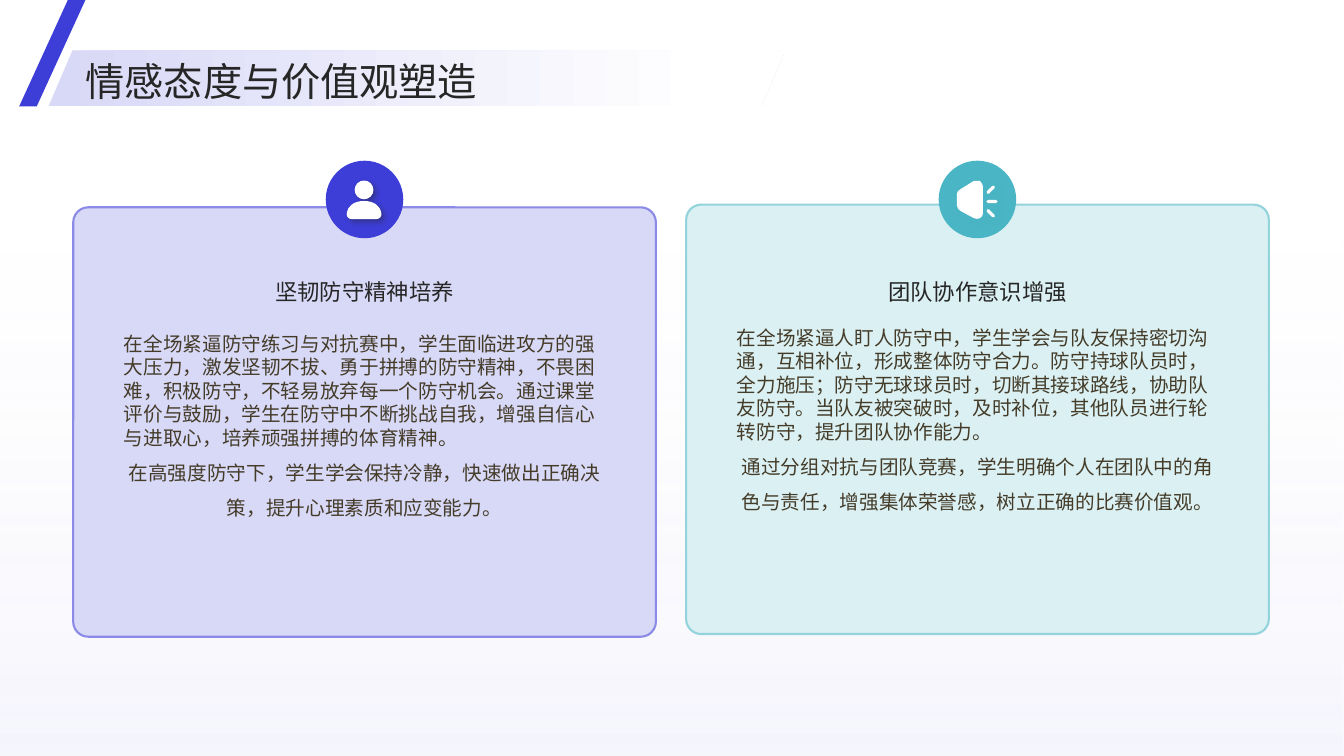
from dataclasses import dataclass
from math import atan2, cos, pi, sin

from lxml.etree import Element, SubElement
from pptx import Presentation
from pptx.dml.color import RGBColor
from pptx.enum.shapes import MSO_SHAPE
from pptx.enum.text import MSO_ANCHOR, MSO_AUTO_SIZE, PP_ALIGN
from pptx.oxml.ns import qn
from pptx.util import Pt


@dataclass(frozen=True)
class Theme:
    font: str = "Noto Sans CJK SC"
    ink: str = "262626"
    body_ink: str = "443C29"
    white: str = "FFFFFF"
    violet: str = "3D3ED7"
    violet_line: str = "8B8BE7"
    violet_pale: str = "D8D8F7"
    teal: str = "4AB5C4"
    teal_line: str = "92D3DC"
    teal_pale: str = "DBF0F3"
    title_size: float = 28
    heading_size: float = 16
    body_size: float = 14


THEME = Theme()
SLIDE_WIDTH, SLIDE_HEIGHT = 960, 540
BADGE_SIZE = 55.4
ICON_GRID = BADGE_SIZE / 77
FINENESS = 100

RESILIENCE = [
    "在全场紧逼防守练习与对抗赛中，学生面临进攻方的强大压力，激发坚韧不拔、勇于拼搏的防守精神，不畏困难，积极防守，不轻易放弃每一个防守机会。通过课堂评价与鼓励，学生在防守中不断挑战自我，增强自信心与进取心，培养顽强拼搏的体育精神。",
    "在高强度防守下，学生学会保持冷静，快速做出正确决策，提升心理素质和应变能力。",
]
TEAMWORK = [
    "在全场紧逼人盯人防守中，学生学会与队友保持密切沟通，互相补位，形成整体防守合力。防守持球队员时，全力施压；防守无球球员时，切断其接球路线，协助队友防守。当队友被突破时，及时补位，其他队员进行轮转防守，提升团队协作能力。",
    "通过分组对抗与团队竞赛，学生明确个人在团队中的角色与责任，增强集体荣誉感，树立正确的比赛价值观。",
]


def color(code):
    return RGBColor.from_string(code)


def place(shape, left, top, width, height):
    shape.left, shape.top = Pt(left), Pt(top)
    shape.width, shape.height = Pt(width), Pt(height)


def bring_to_front(shape):
    shape.element.getparent().append(shape.element)


def add_preset(page, kind, box, fill=None, line=None, adjust=None):
    shape = page.shapes.add_shape(kind, *(Pt(value) for value in box))
    shape.shadow.inherit = False
    if adjust is not None:
        shape.adjustments[0] = adjust
    if fill:
        shape.fill.solid()
        shape.fill.fore_color.rgb = color(fill)
    if line:
        shape.line.color.rgb = color(line)
        shape.line.width = Pt(1.5)
    else:
        shape.line.fill.background()
    return shape


def set_gradient(shape, stops, angle):
    shape.fill.gradient()
    shape.fill.gradient_angle = angle
    for stop, (position, code, opacity) in zip(shape.fill.gradient_stops, stops):
        stop.position = position
        stop.color.rgb = color(code)
    for tint, (position, code, opacity) in zip(shape.element.iter(qn("a:srgbClr")), stops):
        if opacity < 100:
            SubElement(tint, qn("a:alpha"), val=str(opacity * 1000))


def write(frame, text, size, ink, align=PP_ALIGN.LEFT, spacing=1.1, first=True):
    para = frame.paragraphs[0] if first else frame.add_paragraph()
    para.alignment = align
    para.line_spacing = spacing
    para.space_before = para.space_after = Pt(0)
    settings = para._p.get_or_add_pPr()
    settings.set("marL", "0")
    settings.set("indent", "0")
    SubElement(settings, qn("a:buNone"))
    span = para.add_run()
    span.text = text
    span.font.name = THEME.font
    span.font.size = Pt(size)
    span.font.bold = False
    span.font.color.rgb = color(ink)
    SubElement(span.font._element, qn("a:ea"), typeface=THEME.font)


def prepare_frame(frame, margins, anchor=MSO_ANCHOR.TOP):
    frame.word_wrap = True
    frame.auto_size = MSO_AUTO_SIZE.NONE
    frame.vertical_anchor = anchor
    frame.margin_left, frame.margin_top, frame.margin_right, frame.margin_bottom = map(Pt, margins)


def capsule(x1, y1, x2, y2, radius):
    heading = atan2(y2 - y1, x2 - x1)
    pull = 0.5523 * radius
    contour = []
    for x, y, turn in ((x2, y2, -pi / 2), (x1, y1, pi / 2)):
        for start in (heading + turn, heading + turn + pi / 2):
            end = start + pi / 2
            x_start, y_start = x + radius * cos(start), y + radius * sin(start)
            x_end, y_end = x + radius * cos(end), y + radius * sin(end)
            if not contour or start == heading + turn and (x1, y1) != (x2, y2):
                contour.append((x_start, y_start))
            contour.append((x_start - pull * sin(start), y_start + pull * cos(start),
                            x_end + pull * sin(end), y_end - pull * cos(end), x_end, y_end))
    return contour


PERSON = [
    [(38, 40), (49, 40, 54, 46, 55, 51), (56, 55, 54, 58, 50, 58), (26, 58),
     (22, 58, 20, 55, 21, 51), (22, 46, 27, 40, 38, 40)],
    capsule(38, 29, 38, 29, 9.3),
]
SPEAKER = [
    [(38, 20), (39, 20, 40, 20, 41, 20), (43, 22, 44, 24, 44, 26), (44, 52),
     (44, 54, 43, 56, 41, 57), (39, 58, 37, 58, 35, 57), (22, 50),
     (20, 49, 18, 47, 18, 44), (18, 33), (18, 31, 20, 29, 22, 28), (35, 20),
     (36, 20, 37, 20, 38, 20)],
    capsule(49, 49.5, 54.5, 55, 1.6),
    capsule(49, 40.5, 57, 40.5, 1.6),
    capsule(49, 31.5, 54.5, 26, 1.6),
]


def draw_icon(page, contours, left, top, shadow):
    scaled = [[tuple(round(value * FINENESS) for value in node) for node in contour]
              for contour in contours]
    anchors = [[node[-2:] for node in contour] for contour in scaled]
    builder = page.shapes.build_freeform(*anchors[0][0], scale=Pt(1) * ICON_GRID / FINENESS)
    for index, contour in enumerate(anchors):
        if index:
            builder.move_to(*contour[0])
        builder.add_line_segments(contour[1:], close=True)
    icon = builder.convert_to_shape(Pt(left), Pt(top))
    bend_segments(icon, scaled, anchors)
    icon.fill.solid()
    icon.fill.fore_color.rgb = color(THEME.white)
    icon.line.fill.background()
    effects = SubElement(icon.element.spPr, qn("a:effectLst"))
    outer = SubElement(effects, qn("a:outerShdw"), blurRad=str(Pt(4)), dist=str(Pt(3)),
                       dir="2700000", algn="tl", rotWithShape="0")
    tint = SubElement(outer, qn("a:srgbClr"), val=shadow)
    SubElement(tint, qn("a:alpha"), val="40000")


def bend_segments(icon, contours, anchors):
    x_min = min(x for contour in anchors for x, y in contour)
    y_min = min(y for contour in anchors for x, y in contour)
    outline = next(icon.element.iter(qn("a:pathLst")))[0]
    nodes = [node for contour in contours for node in contour]
    steps = [step for step in outline if step.tag != qn("a:close")]
    steps = [step for step in steps if len(step)]
    position = 0
    for contour in contours:
        for node, step in zip(contour, steps[position:]):
            if len(node) == 6:
                step.tag = qn("a:cubicBezTo")
                for slot in (0, 1):
                    x, y = node[2 * slot:2 * slot + 2]
                    step.insert(slot, Element(qn("a:pt"), x=str(x - x_min), y=str(y - y_min)))
        position += len(contour)


def draw_backdrop(page, box):
    backdrop = add_preset(page, MSO_SHAPE.RECTANGLE, box)
    set_gradient(backdrop, [(0, THEME.violet_pale, 25), (0.85, THEME.white, 0)], 90)


def draw_header(page, box):
    left, top, width, height = box
    band = add_preset(page, MSO_SHAPE.PARALLELOGRAM,
                      (left + 20.9, top + 36, 526.3, 40), adjust=0.43)
    set_gradient(band, [(0, THEME.violet_pale, 100), (0.89, THEME.white, 100)], 0)
    title = page.shapes.title
    place(title, left + 47.5, top + 37.4, width - 47.5, 36.7)
    prepare_frame(title.text_frame, (0, 0, 0, 0), MSO_ANCHOR.MIDDLE)
    write(title.text_frame, "情感态度与价值观塑造", THEME.title_size, THEME.ink)
    bring_to_front(title)
    add_preset(page, MSO_SHAPE.PARALLELOGRAM, (left, top, 47.3, height), THEME.violet, adjust=0.735)


def draw_card(page, box, body, heading, paragraphs, icon, accent, pale, line, shadow,
              panel_drop, body_drop):
    left, top, width, height = box
    add_preset(page, MSO_SHAPE.ROUNDED_RECTANGLE,
               (left, top + panel_drop, width, height), pale, line, 0.035)
    badge_left = left + (width - BADGE_SIZE) / 2
    add_preset(page, MSO_SHAPE.FLOWCHART_CONNECTOR,
               (badge_left, top, BADGE_SIZE, BADGE_SIZE), accent)
    draw_icon(page, icon, badge_left, top, shadow)

    text_left, text_width = left + 29, width - 58
    label = page.shapes.add_textbox(Pt(text_left), Pt(top + 78.2), Pt(text_width), Pt(28.8))
    prepare_frame(label.text_frame, (7.2, 3.6, 7.2, 3.6))
    write(label.text_frame, heading, THEME.heading_size, THEME.ink, PP_ALIGN.CENTER)

    place(body, text_left, top + body_drop, text_width, 210)
    prepare_frame(body.text_frame, (7.2, 3.6, 7.2, 3.6))
    styles = ((PP_ALIGN.LEFT, 1.0), (PP_ALIGN.CENTER, 1.5))
    for index, (text, (align, spacing)) in enumerate(zip(paragraphs, styles)):
        write(body.text_frame, text, THEME.body_size, THEME.body_ink, align, spacing, index == 0)
    bring_to_front(body)


def main():
    deck = Presentation()
    deck.slide_width, deck.slide_height = Pt(SLIDE_WIDTH), Pt(SLIDE_HEIGHT)
    page = deck.slides.add_slide(deck.slide_layouts[3])
    title, left_body, right_body = page.placeholders
    draw_backdrop(page, (0, 0, SLIDE_WIDTH, SLIDE_HEIGHT))
    draw_card(page, (52.3, 114.8, 416.2, 306.7), left_body, "坚韧防守精神培养", RESILIENCE,
              PERSON, THEME.violet, THEME.violet_pale, THEME.violet_line, THEME.ink, 33.3, 118.5)
    draw_card(page, (490.1, 114.8, 416.2, 306.7), right_body, "团队协作意识增强", TEAMWORK,
              SPEAKER, THEME.teal, THEME.teal_pale, THEME.teal_line, THEME.teal, 31.4, 114.2)
    draw_header(page, (13.7, 0, 893.5, 76))
    deck.save("out.pptx")


if __name__ == "__main__":
    main()
